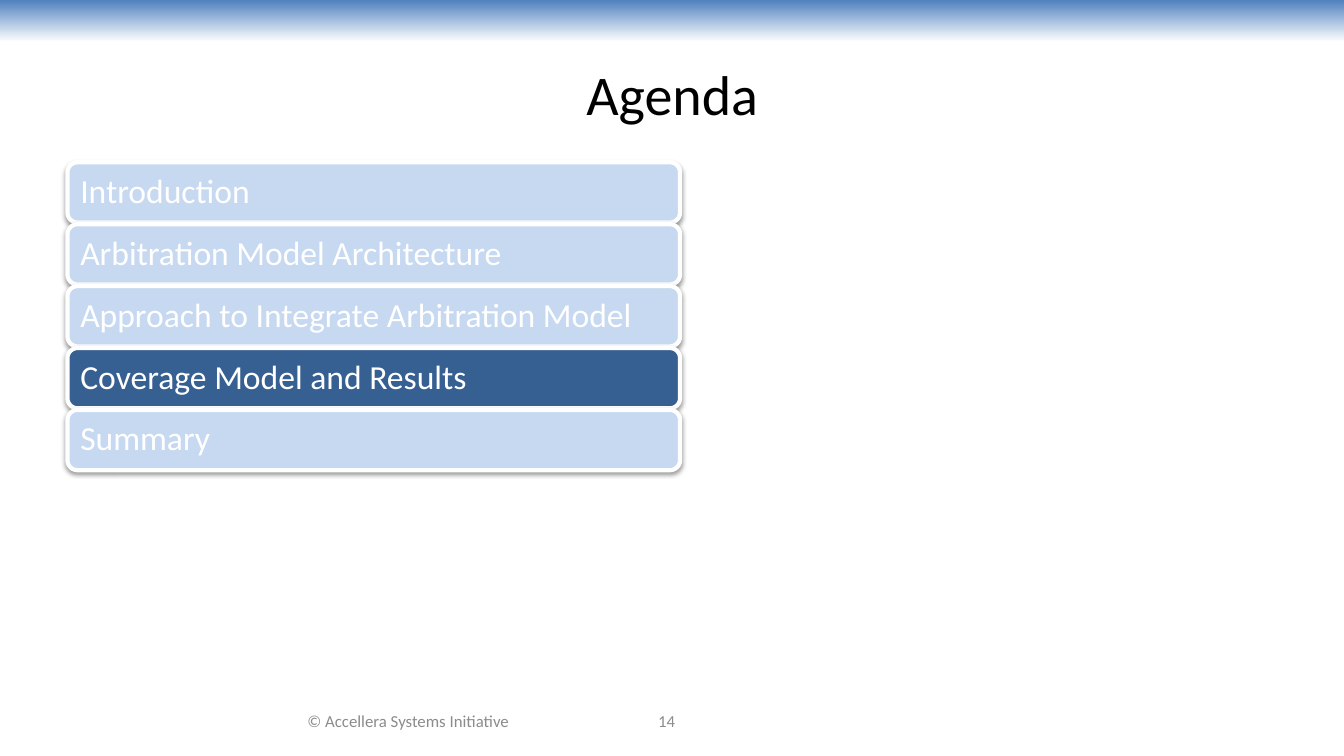
from lxml import etree
from pptx import Presentation
from pptx import util as u
from pptx.dml.color import RGBColor
from pptx.enum import shapes, text
from pptx.oxml import ns

BLUE = RGBColor(0x4F, 0x81, 0xBD)
PALE_BLUE = RGBColor(0xC6, 0xD9, 0xF1)
DARK_BLUE = RGBColor(0x37, 0x60, 0x92)
WHITE = RGBColor(0xFF, 0xFF, 0xFF)
BLACK = RGBColor(0x00, 0x00, 0x00)
GREY = RGBColor(0x8C, 0x8C, 0x8C)

TOPICS = [
    "Introduction",
    "Arbitration Model Architecture",
    "Approach to Integrate Arbitration Model",
    "Coverage Model and Results",
    "Summary",
]
CURRENT_TOPIC = "Coverage Model and Results"
TOPIC_TOP = 4.09
TOPIC_PITCH = 1.56


class AgendaPage:
    font_name = "Calibri"

    def __init__(self, deck):
        self.page = deck.slides.add_slide(deck.slide_layouts[6])

    def set_text(self, shape, wording, size, color, align):
        frame = shape.text_frame
        frame.word_wrap = True
        frame.vertical_anchor = text.MSO_ANCHOR.MIDDLE
        para = frame.paragraphs[0]
        para.text = wording
        para.alignment = align
        para.font.name = self.font_name
        para.font.size = u.Pt(size)
        para.font.color.rgb = color
        return para

    def label(self, wording, left, top, width, height, size, color):
        box = self.page.shapes.add_textbox(*map(u.Cm, (left, top, width, height)))
        self.set_text(box, wording, size, color, text.PP_ALIGN.CENTER)

    def shape(self, kind, left, top, width, height):
        shape = self.page.shapes.add_shape(kind, *map(u.Cm, (left, top, width, height)))
        shape.shadow.inherit = False
        return shape

    def gradient_band(self, width, height, start, end):
        band = self.shape(shapes.MSO_SHAPE.RECTANGLE, 0, 0, width, height)
        band.line.fill.background()
        band.fill.gradient()
        band.fill.gradient_angle = 270
        for stop, color in zip(band.fill.gradient_stops, (start, end)):
            stop.color.rgb = color

    def topic(self, wording, top, color):
        bar = self.shape(shapes.MSO_SHAPE.ROUNDED_RECTANGLE, 1.7, top, 15.44, 1.52)
        bar.fill.solid()
        bar.fill.fore_color.rgb = color
        bar.line.color.rgb = WHITE
        bar.line.width = u.Pt(3)
        self.drop_shadow(bar)
        frame = bar.text_frame
        frame.margin_left = frame.margin_right = u.Cm(0.25)
        frame.margin_top = frame.margin_bottom = u.Cm(0.25)
        para = self.set_text(bar, wording, 24, WHITE, text.PP_ALIGN.LEFT)
        para.line_spacing = 0.9

    def drop_shadow(self, shape):
        effects = shape._element.spPr.find(ns.qn("a:effectLst"))
        shadow = etree.SubElement(
            effects, ns.qn("a:outerShdw"), blurRad=str(u.Pt(3.1)),
            dist=str(u.Pt(1.6)), dir="5400000", rotWithShape="0")
        color = etree.SubElement(shadow, ns.qn("a:srgbClr"), val=str(BLACK))
        etree.SubElement(color, ns.qn("a:alpha"), val="38000")


def main():
    deck = Presentation()
    deck.slide_width = u.Cm(33.87)
    deck.slide_height = u.Cm(19.05)
    agenda = AgendaPage(deck)
    agenda.gradient_band(33.87, 1.06, BLUE, WHITE)
    agenda.label("Agenda", 1.7, 0.76, 30.48, 3.18, 40, BLACK)
    agenda.label("© Accellera Systems Initiative", 6.2, 17.65, 8.18, 1.02, 12, GREY)
    agenda.label("14", 13.55, 17.65, 6.5, 1.02, 12, GREY)
    for index, topic in enumerate(TOPICS):
        color = DARK_BLUE if topic == CURRENT_TOPIC else PALE_BLUE
        agenda.topic(topic, TOPIC_TOP + index * TOPIC_PITCH, color)
    deck.save("out.pptx")


if __name__ == "__main__":
    main()
